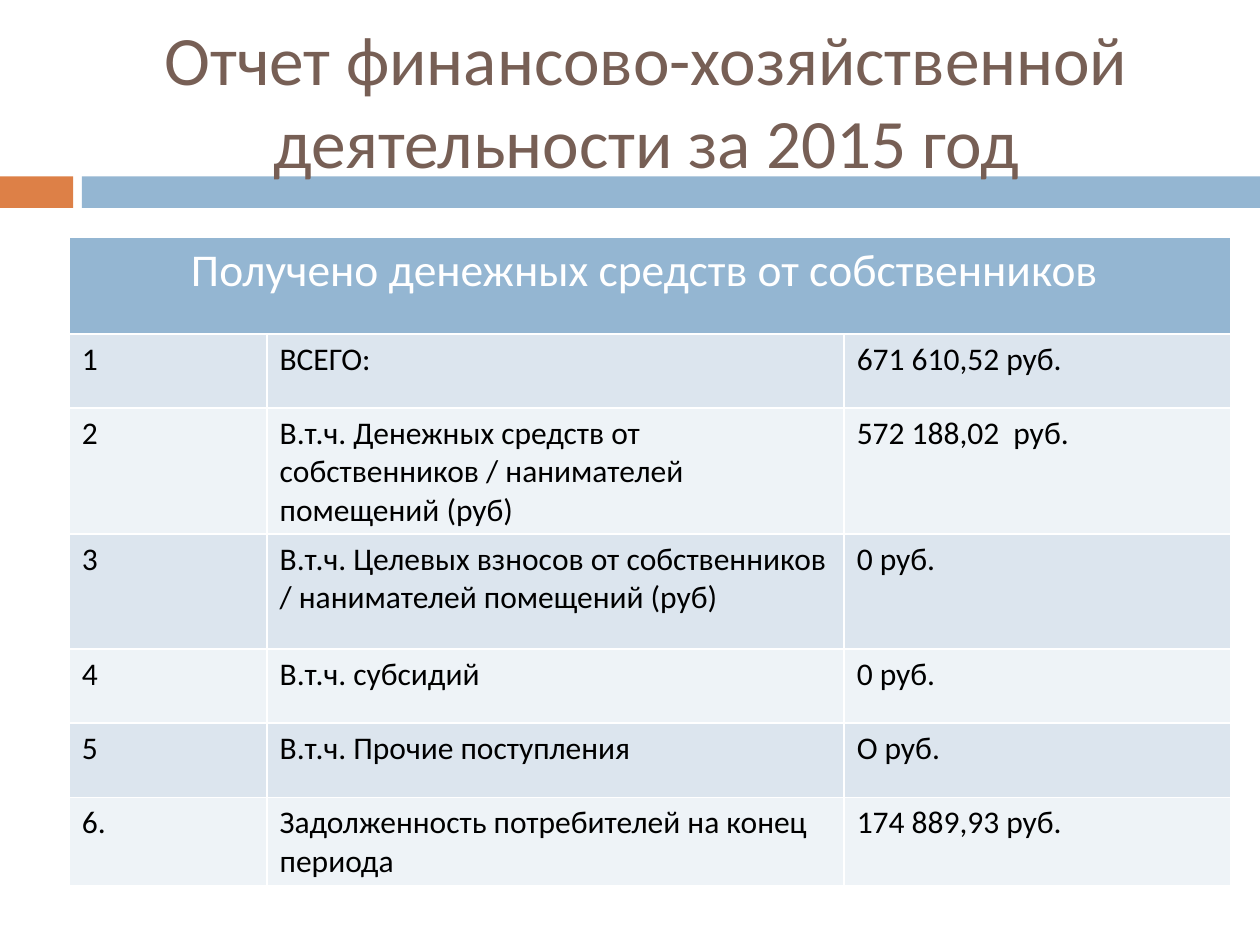
from pptx import Presentation
from pptx.dml.color import RGBColor
from pptx.enum.shapes import MSO_SHAPE
from pptx.enum.text import MSO_ANCHOR, PP_ALIGN
from pptx.util import Inches, Pt

WIDE, HIGH = 10, 7.5
FONT = "Calibri"
HEX = {
    "orange": "DD8047",
    "blue": "94B6D2",
    "brown": "775F55",
    "odd": "DCE5EE",
    "even": "EEF3F7",
    "white": "FFFFFF",
    "black": "000000",
}

TITLE = "Отчет финансово-хозяйственной деятельности за 2015 год"
HEAD = "Получено денежных средств от собственников "
ROWS = [
    ("1", "ВСЕГО:", "671 610,52 руб."),
    ("2", "В.т.ч. Денежных средств от собственников / нанимателей помещений (руб)",
     "572 188,02  руб."),
    ("3", "В.т.ч. Целевых взносов от собственников / нанимателей помещений (руб)",
     "0 руб."),
    ("4", "В.т.ч. субсидий", "0 руб."),
    ("5", "В.т.ч. Прочие поступления", "О руб."),
    ("6.", "Задолженность потребителей на конец периода", "174 889,93 руб."),
]
COLS = [1.57, 4.58, 3.07]
TALL = [0.77, 0.59, 0.91, 0.91, 0.59, 0.59, 0.64]


def color(name):
    return RGBColor.from_string(HEX[name])


def write(frame, text, size, tint, align=PP_ALIGN.LEFT):
    line = frame.paragraphs[0]
    line.text = text
    line.alignment = align
    font = line.font
    font.name, font.size, font.bold = FONT, Pt(size), False
    font.color.rgb = color(tint)


def add_band(slide, left, width, tint):
    band = slide.shapes.add_shape(
        MSO_SHAPE.RECTANGLE, Inches(left), Inches(1.4), Inches(width), Inches(0.25))
    band.shadow.inherit = False
    band.fill.solid()
    band.fill.fore_color.rgb = color(tint)
    band.line.fill.background()


def add_title(slide):
    box = slide.shapes.add_textbox(
        Inches(0.67), Inches(0.25), Inches(8.92), Inches(1.08))
    frame = box.text_frame
    frame.word_wrap = True
    frame.vertical_anchor = MSO_ANCHOR.MIDDLE
    write(frame, TITLE, 39.6, "brown", PP_ALIGN.CENTER)


def fill_cell(cell, tint):
    cell.fill.solid()
    cell.fill.fore_color.rgb = color(tint)


def add_grid(slide):
    grid = slide.shapes.add_table(
        len(TALL), len(COLS), Inches(0.55), Inches(1.88),
        Inches(sum(COLS)), Inches(sum(TALL))).table
    for col, width in zip(grid.columns, COLS):
        col.width = Inches(width)
    for row, height in zip(grid.rows, TALL):
        row.height = Inches(height)

    # Heading across all columns
    head = grid.cell(0, 0)
    head.merge(grid.cell(0, len(COLS) - 1))
    fill_cell(head, "blue")
    write(head.text_frame, HEAD, 26, "white", PP_ALIGN.CENTER)

    # Banded rows of receipts
    for r, texts in enumerate(ROWS, 1):
        for c, text in enumerate(texts):
            cell = grid.cell(r, c)
            fill_cell(cell, "odd" if r % 2 else "even")
            write(cell.text_frame, text, 18, "black")


def main():
    deck = Presentation()
    deck.slide_width, deck.slide_height = Inches(WIDE), Inches(HIGH)
    slide = deck.slides.add_slide(deck.slide_layouts[6])
    # Divider under the title
    add_band(slide, 0, 0.58, "orange")
    add_band(slide, 0.65, WIDE - 0.65, "blue")
    add_title(slide)
    add_grid(slide)
    deck.save("out.pptx")


if __name__ == "__main__":
    main()
